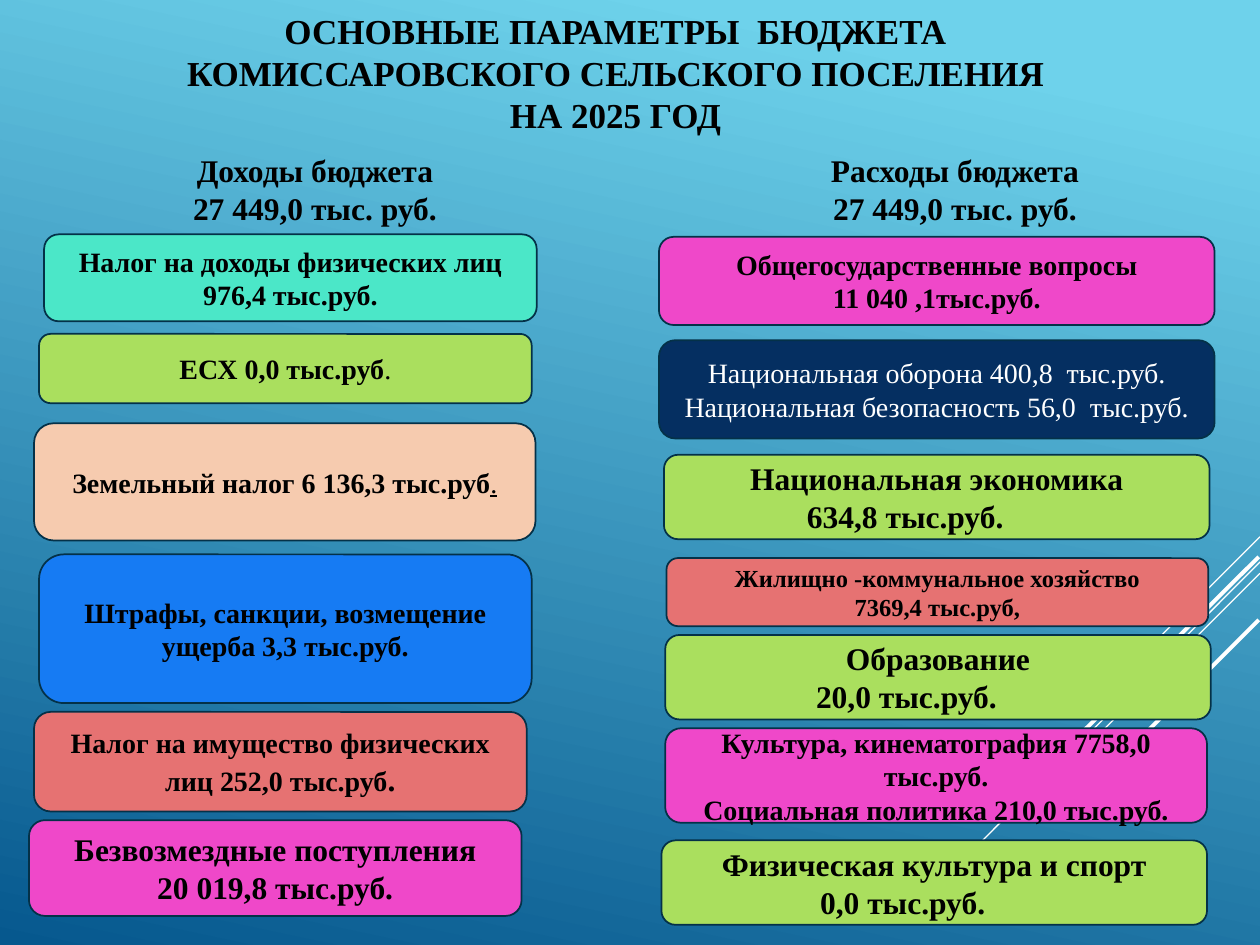
from lxml.etree import SubElement
from pptx import Presentation
from pptx.dml.color import RGBColor
from pptx.enum.shapes import MSO_CONNECTOR, MSO_SHAPE
from pptx.enum.text import MSO_ANCHOR as Anchor, PP_ALIGN as Align
from pptx.oxml.ns import qn
from pptx.util import Inches, Pt

COLUMNS, ROWS = 100, 75
LIME, PINK, CORAL, NAVY = "AADF5E", "EF48C9", "E67272", "052F61"
BLACK, WHITE, OUTLINE = "000000", "FFFFFF", "043148"


def rgb(value):
    return RGBColor.from_string(value)


class BudgetSlide:
    """Holds the style and the slide; lengths are grid columns and rows."""
    font = {"name": "Times New Roman", "bold": True}

    def __init__(self, deck):
        self.cell_w = deck.slide_width / COLUMNS
        self.cell_h = deck.slide_height / ROWS
        self.slide = deck.slides.add_slide(deck.slide_layouts[5])
        self.shapes = self.slide.shapes

    def place(self, *columns_rows):
        """Turn alternating columns and rows into lengths."""
        return [round(value * (self.cell_h if i % 2 else self.cell_w))
                for i, value in enumerate(columns_rows)]

    def background(self, light, dark):
        fill = self.slide.background.fill
        fill.gradient()
        fill.gradient_angle = 258
        for stop, color, position in zip(fill.gradient_stops, (light, dark), (0.1, 1)):
            stop.color.rgb = rgb(color)
            stop.position = position

    def ray(self, x1, y1, x2, y2, width):
        line = self.shapes.add_connector(MSO_CONNECTOR.STRAIGHT,
                                         *self.place(x1, y1, x2, y2))
        line.line.color.rgb = rgb(WHITE)
        line.line.width = Pt(width)
        SubElement(line._element.spPr, qn("a:effectLst"))

    def format_run(self, run, size, color, **changes):
        for key, value in {**self.font, "size": Pt(size), **changes}.items():
            setattr(run.font, key, value)
        run.font.color.rgb = rgb(color)

    def set_text(self, frame, lines, size, color=BLACK, anchor=Anchor.MIDDLE, **changes):
        for key, value in {"word_wrap": True, "vertical_anchor": anchor}.items():
            setattr(frame, key, value)
        frame.text = "\n".join(lines)
        for paragraph in frame.paragraphs:
            paragraph.alignment = Align.CENTER
            for run in paragraph.runs:
                self.format_run(run, size, color, **changes)

    def title(self, box, text, size):
        title = self.shapes.title
        for key, value in zip(("left", "top", "width", "height"), self.place(*box)):
            setattr(title, key, value)
        self.set_text(title.text_frame, [text], size)

    def heading(self, box, lines):
        frame = self.shapes.add_textbox(*self.place(*box)).text_frame
        self.set_text(frame, lines, 18, anchor=Anchor.TOP)

    def card(self, box, fill, lines, size=16, color=BLACK, tail=None, shift=0, **changes):
        """Rounded box; tail formats a closing dot, shift moves the last line left."""
        card = self.shapes.add_shape(MSO_SHAPE.ROUNDED_RECTANGLE, *self.place(*box))
        card.shadow.inherit = False
        card.fill.solid()
        card.fill.fore_color.rgb = rgb(fill)
        card.line.color.rgb = rgb(OUTLINE)
        card.line.width = Pt(1)
        self.set_text(card.text_frame, lines, size, color, **changes)
        last = card.text_frame.paragraphs[-1]
        if tail:
            dot = last.add_run()
            dot.text = "."
            self.format_run(dot, **{"size": size, "color": color, **tail})
        if shift:
            last._p.get_or_add_pPr().set("marR", str(Inches(shift)))


RAYS = [
    (100, 42.6, 91.7, 50.9, 0.75),
    (100, 44.6, 73, 71.7, 0.75),
    (100, 45.5, 82.8, 62.7, 0.75),
    (99.9, 44.2, 84.1, 59.9, 2.25),
    (99.9, 49.2, 88.5, 60.6, 2.25),
]

INCOME = [
    ((3.5, 18.6, 39.1, 6.9), "4BE7C8",
     ["Налог на доходы физических лиц 976,4 тыс.руб."], {}),
    ((3.1, 26.5, 39.1, 5.5), LIME, ["ЕСХ 0,0 тыс.руб"], {"tail": {"bold": False}}),
    ((2.7, 33.6, 39.8, 9.3), "F6CBAF", ["Земельный налог 6 136,3 тыс.руб"],
     {"tail": {"bold": False, "underline": True}}),
    ((3.1, 44, 39.1, 11.8), "167BF3",
     ["Штрафы, санкции, возмещение ущерба 3,3 тыс.руб."], {}),
    ((2.7, 56.5, 39.1, 7.9), CORAL,
     ["Налог на имущество физических лиц 252,0 тыс.руб"], {"tail": {"size": 18}}),
    ((2.3, 65.1, 39.1, 7.6), PINK,
     ["Безвозмездные поступления", "20 019,8 тыс.руб."], {"size": 18}),
]

SHIFTED = {"size": 18, "shift": 0.5}
SPENDING = [
    ((52.3, 18.8, 44.1, 7), PINK,
     ["Общегосударственные вопросы", "11 040 ,1тыс.руб."], {}),
    ((52.3, 27, 44.1, 7.8), NAVY,
     ["Национальная оборона 400,8  тыс.руб.",
      "Национальная безопасность 56,0  тыс.руб."], {"color": WHITE, "bold": False}),
    ((52.7, 36.1, 43.3, 6.7), LIME,
     ["Национальная экономика", "634,8 тыс.руб."], SHIFTED),
    ((52.9, 44.3, 43, 5.4), CORAL,
     ["Жилищно -коммунальное хозяйство", "7369,4 тыс.руб,"], {"size": 14}),
    ((52.8, 50.4, 43.3, 6.7), LIME, ["Образование", "20,0 тыс.руб."], SHIFTED),
    ((52.8, 57.8, 43, 7.5), PINK,
     ["Культура, кинематография 7758,0 тыс.руб.",
      "Социальная политика 210,0 тыс.руб."], {}),
    ((52.5, 66.7, 43.3, 6.7), LIME,
     ["Физическая культура и спорт", "0,0 тыс.руб."], SHIFTED),
]


def main():
    deck = Presentation()
    deck.slide_width, deck.slide_height = Inches(10), Inches(7.5)
    budget = BudgetSlide(deck)
    budget.background("6ED2EB", "06588E")
    for ray in RAYS:
        budget.ray(*ray)
    budget.title((4.7, 1.3, 88.3, 8.9),
                 "ОСНОВНЫЕ ПАРАМЕТРЫ  БЮДЖЕТА\vКОМИССАРОВСКОГО СЕЛЬСКОГО ПОСЕЛЕНИЯ"
                 "\vНА 2025 ГОД", 20)
    budget.heading((3.1, 11.5, 43.8, 7.1), ["Доходы бюджета", "27 449,0 тыс. руб."])
    budget.heading((55.5, 11.5, 40.6, 7.1), ["Расходы бюджета", "27 449,0 тыс. руб."])
    for box, fill, lines, style in INCOME + SPENDING:
        budget.card(box, fill, lines, **style)
    deck.save("out.pptx")


if __name__ == "__main__":
    main()
